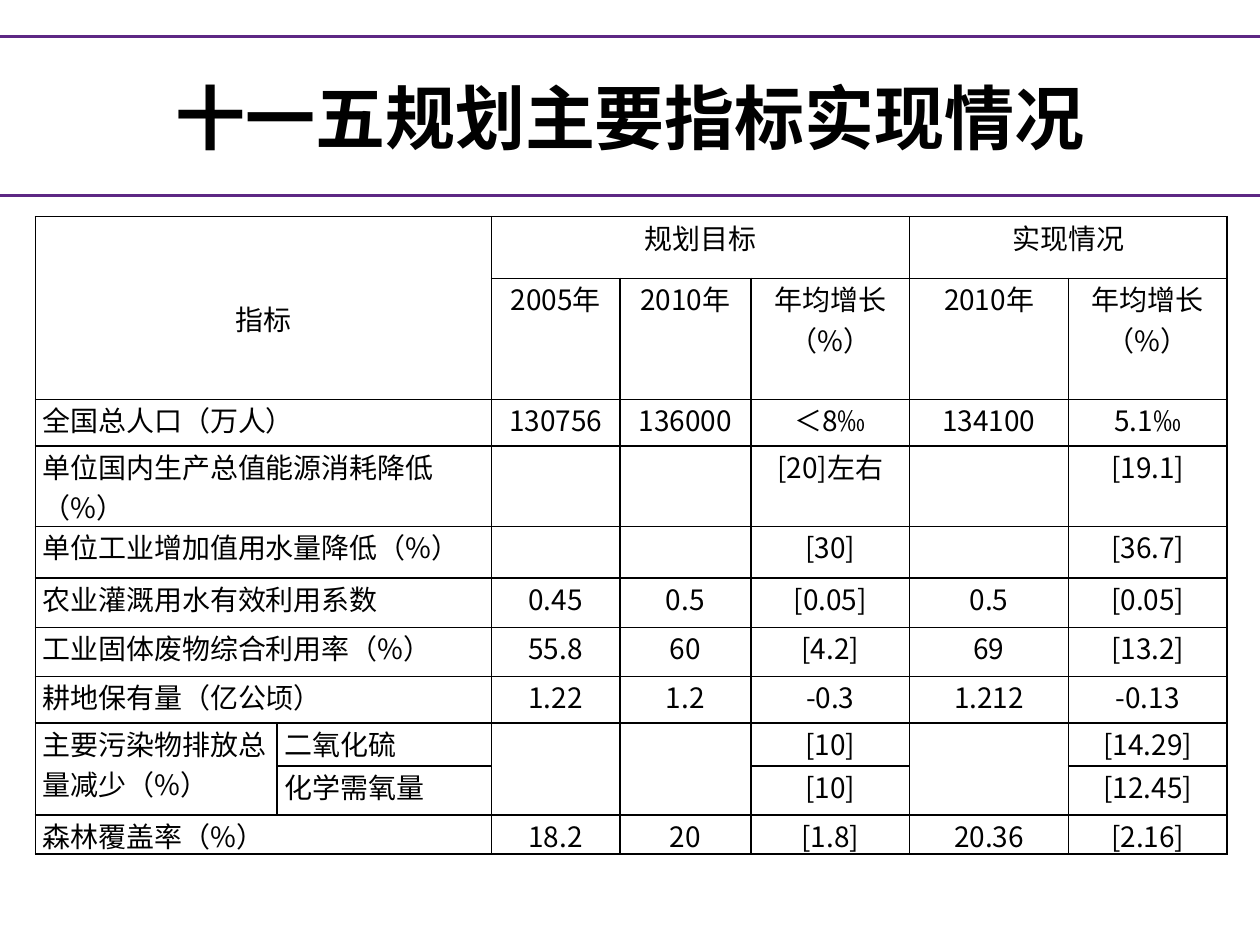
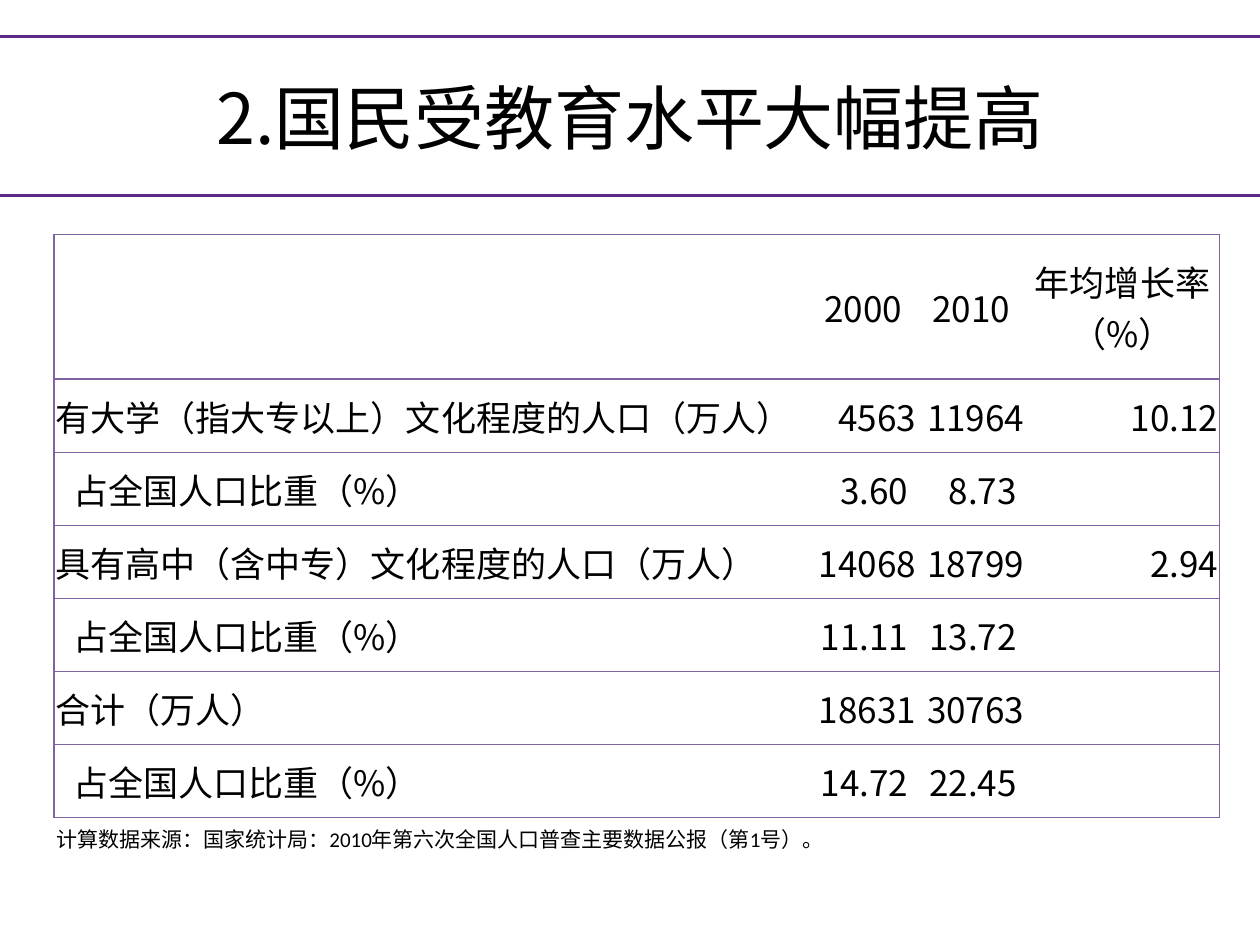
"""Builds two slides of planning and education indicators, each a titled table."""
from lxml.etree import SubElement
from pptx import Presentation
from pptx.dml.color import RGBColor
from pptx.enum.shapes import MSO_CONNECTOR as CONN
from pptx.enum.text import MSO_ANCHOR as ANCHOR, PP_ALIGN as ALIGN
from pptx.oxml.ns import qn
from pptx.util import Inches, Pt

COLORS = {"band": "5D2884", "grid": "8064A2", "text": "000000", "paper": "FFFFFF"}
CJK, LATIN = "Noto Sans CJK SC", "Calibri"
BANDS = [(0, 0.29), (-0.04, 1.55)]

PLAN = {
    "title": "十一五规划主要指标实现情况",
    "at": (0.28, 1.72),
    "cols": [1.92, 1.7, 1.02, 1.04, 1.26, 1.26, 1.26],
    "heights": [0.49, 0.96, 0.37, 0.64, 0.41, 0.39, 0.39, 0.37, 0.34, 0.39, 0.31],
    "rows": [
        ("指标", "", "规划目标", "", "", "实现情况", ""),
        ("", "", "2005年", "2010年", "年均增长（%）", "2010年", "年均增长（%）"),
        ("全国总人口（万人）", "", "130756", "136000", "＜8‰", "134100", "5.1‰"),
        ("单位国内生产总值能源消耗降低（%）", "", "", "", "[20]左右", "", "[19.1]"),
        ("单位工业增加值用水量降低（%）", "", "", "", "[30]", "", "[36.7]"),
        ("农业灌溉用水有效利用系数", "", "0.45", "0.5", "[0.05]", "0.5", "[0.05]"),
        ("工业固体废物综合利用率（%）", "", "55.8", "60", "[4.2]", "69", "[13.2]"),
        ("耕地保有量（亿公顷）", "", "1.22", "1.2", "-0.3", "1.212", "-0.13"),
        ("主要污染物排放总量减少（%）", "二氧化硫", "", "", "[10]", "", "[14.29]"),
        ("", "化学需氧量", "", "", "[10]", "", "[12.45]"),
        ("森林覆盖率（%）", "", "18.2", "20", "[1.8]", "20.36", "[2.16]"),
    ],
}
POLLUTANT_ROW, LAST_ROW = 8, 10

SHARE = "占全国人口比重（%）"
EDUCATION = {
    "title": "2.国民受教育水平大幅提高",
    "at": (0.43, 1.86),
    "cols": [5.99, 0.86, 0.86, 1.54],
    "heights": [1.15] + [0.58] * 6,
    "rows": [
        ("", "2000", "2010", "年均增长率\n（%）"),
        ("有大学（指大专以上）文化程度的人口（万人）", "4563", "11964", "10.12"),
        (SHARE, "3.60", "8.73", ""),
        ("具有高中（含中专）文化程度的人口（万人）", "14068", "18799", "2.94"),
        (SHARE, "11.11", "13.72", ""),
        ("合计（万人）", "18631", "30763", ""),
        (SHARE, "14.72", "22.45", ""),
    ],
}
SOURCE = "计算数据来源：国家统计局：2010年第六次全国人口普查主要数据公报（第1号）。"


def rgb(name):
    return RGBColor.from_string(COLORS[name])


def write(tf, text, size, font=CJK, bold=False, align=ALIGN.LEFT):
    for i, line in enumerate(text.split("\n")):
        p = tf.paragraphs[0] if i == 0 else tf.add_paragraph()
        p.alignment = align
        if not line:
            p._p.get_or_add_endParaRPr().set("sz", str(size * 100))
            continue
        r = p.add_run()
        r.text = line
        r.font.size, r.font.bold, r.font.name = Pt(size), bold, font
        r.font.color.rgb = rgb("text")
        SubElement(r._r.get_or_add_rPr(), qn("a:ea")).set("typeface", CJK)


def add_text(s, text, box, size, anchor=ANCHOR.TOP, **fmt):
    tf = s.shapes.add_textbox(*map(Inches, box)).text_frame
    tf.word_wrap, tf.vertical_anchor = True, anchor
    write(tf, text, size, **fmt)


def add_slide(prs, title, **fmt):
    s = prs.slides.add_slide(prs.slide_layouts[6])
    for x, y in BANDS:
        ends = map(Inches, (x, y, 10, y))
        line = s.shapes.add_connector(CONN.STRAIGHT, *ends)
        line.line.color.rgb, line.line.width = rgb("band"), Pt(2)
        SubElement(line._element.spPr, qn("a:effectLst"))
    add_text(s, title, (0.5, 0.3, 9, 1.25), 40, ANCHOR.MIDDLE, align=ALIGN.CENTER, **fmt)
    return s


def set_borders(cell, color, sides):
    tcPr = cell._tc.get_or_add_tcPr()
    for side in "LRTB":
        ln = SubElement(tcPr, qn(f"a:ln{side}"), w=str(Pt(1)))
        if side in sides:
            fill = SubElement(ln, qn("a:solidFill"))
            SubElement(fill, qn("a:srgbClr"), val=COLORS[color])
        else:
            SubElement(ln, qn("a:noFill"))


def add_table(s, data, size, margins, anchor, border, align_of, sides_of):
    rows, cols, heights = data["rows"], data["cols"], data["heights"]
    box = map(Inches, (*data["at"], sum(cols), sum(heights)))
    table = s.shapes.add_table(len(rows), len(cols), *box).table
    table.first_row = table.horz_banding = False
    for col, width in zip(table.columns, cols):
        col.width = Inches(width)
    for row, height in zip(table.rows, heights):
        row.height = Inches(height)
    for i, row in enumerate(rows):
        for j, text in enumerate(row):
            cell = table.cell(i, j)
            cell.margin_left = cell.margin_right = Inches(margins[0])
            cell.margin_top = cell.margin_bottom = Inches(margins[1])
            cell.vertical_anchor = anchor
            write(cell.text_frame, text, size, align=align_of(i, j))
            set_borders(cell, border, sides_of(j))
            cell.fill.solid()
            cell.fill.fore_color.rgb = rgb("paper")
    return table


def plan_slide(prs):
    s = add_slide(prs, PLAN["title"], font=LATIN, bold=True)
    table = add_table(
        s, PLAN, 16, (0.06, 0), ANCHOR.TOP, "text",
        lambda i, j: ALIGN.CENTER if i < 2 or j > 1 else ALIGN.LEFT,
        lambda j: "LRTB")
    table.cell(0, 0).margin_top = Inches(0.65)
    merges = [(0, 0, 1, 1), (0, 2, 0, 4), (0, 5, 0, 6)]
    merges += [(i, 0, i, 1) for i in (*range(2, POLLUTANT_ROW), LAST_ROW)]
    merges += [(POLLUTANT_ROW, j, POLLUTANT_ROW + 1, j) for j in (0, 2, 3, 5)]
    for top, left, bottom, right in merges:
        table.cell(top, left).merge(table.cell(bottom, right))


def education_slide(prs):
    s = add_slide(prs, EDUCATION["title"])
    table = add_table(
        s, EDUCATION, 20, (0.01, 0.01), ANCHOR.MIDDLE, "grid",
        lambda i, j: ALIGN.LEFT if j == 0 else ALIGN.CENTER if i == 0 else ALIGN.RIGHT,
        lambda j: "TB" + {0: "L", 3: "R"}.get(j, ""))
    for i, row in enumerate(EDUCATION["rows"]):
        if row[0] == SHARE:
            table.cell(i, 0).margin_left = Inches(0.15)
            for j in (1, 2):
                table.cell(i, j).margin_right = Inches(0.07)
    add_text(s, SOURCE, (0.35, 6.51, 8.5, 0.3), 12, font=LATIN)


def main():
    prs = Presentation()
    prs.slide_width, prs.slide_height = Inches(10), Inches(7.5)
    plan_slide(prs)
    education_slide(prs)
    prs.save("out.pptx")


if __name__ == "__main__":
    main()
